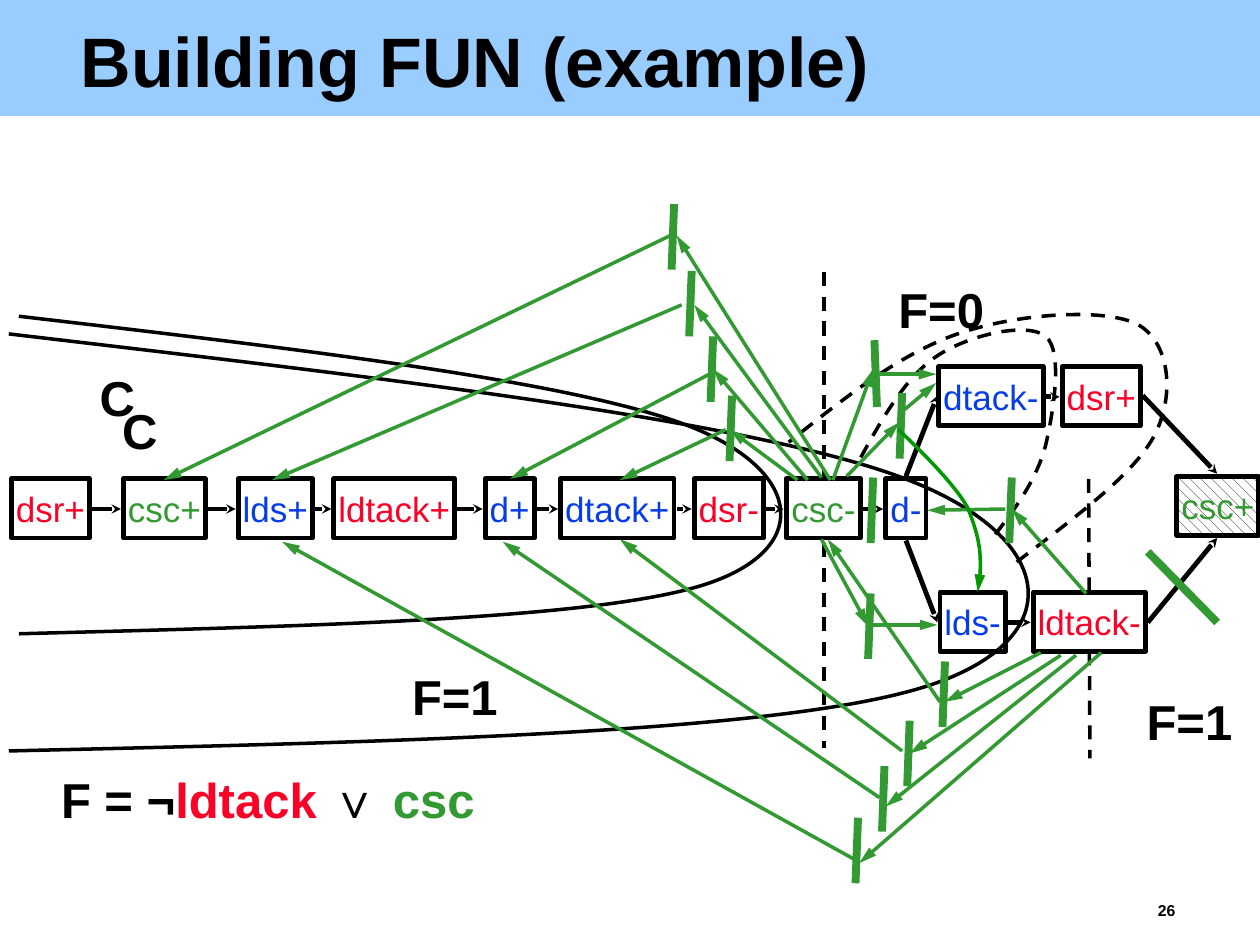
from dataclasses import dataclass
from itertools import pairwise

from pptx import Presentation
from pptx.dml.color import RGBColor as RGB
from pptx.enum.dml import MSO_LINE as Dash, MSO_PATTERN as Hatch
from pptx.enum.shapes import MSO_CONNECTOR as Link, MSO_SHAPE as Kind
from pptx.enum.text import MSO_ANCHOR as Anchor, PP_ALIGN as Align
from pptx.oxml.ns import qn
from pptx.oxml.xmlchemy import OxmlElement as Node
from pptx.util import Pt

SCALE = 9144  # EMU per px, 100 px to the inch


@dataclass(frozen=True)
class Theme:
    font: str = "Arial"
    black: str = "000000"
    white: str = "FFFFFF"
    band: str = "99CCFF"
    red: str = "FC0128"
    blue: str = "063DE8"
    green: str = "339933"
    leaf: str = "009900"
    title: float = 40
    label: float = 28
    event: float = 20
    number: float = 9
    thin: float = 2
    mid: float = 2.75
    thick: float = 4.5


T = Theme()
HIGH = 47  # box height

# text, colour, left, width
CHAIN = [
    ("dsr+", T.red, 9, 62), ("csc+", T.green, 98, 65),
    ("lds+", T.blue, 189, 59), ("ldtack+", T.red, 265, 96),
    ("d+", T.blue, 385, 39), ("dtack+", T.blue, 445, 90),
    ("dsr-", T.red, 551, 55), ("csc-", T.green, 624, 59),
    ("d-", T.blue, 703, 32),
]
UPPER = [("dtack-", T.blue, 745, 83), ("dsr+", T.red, 843, 62)]
LOWER = [("lds-", T.blue, 746, 52), ("ldtack-", T.red, 820, 89)]
ROWS = [(380, CHAIN), (291, UPPER), (470, LOWER)]

FORKS = [
    (719, 378, 744, 314), (719, 429, 744, 494),
    (911, 494, 966, 427), (907, 314, 966, 376),
]
CUTS = [(864, 380, 865, 602), (654, 216, 654, 594)]

# top ends of the upright green bars
BARS = [
    (750, 525), (722, 572), (702, 608), (681, 649), (803, 379),
    (581, 314), (566, 267), (549, 215), (535, 162),
    (693, 379), (691, 471), (716, 312),
]
SLANTS = [(911, 438, 966, 494), (694, 270, 696, 323)]

# from ldtack-
LOW_RAYS = [
    (826, 518, 750, 557), (746, 557, 657, 428),
    (842, 520, 722, 598), (716, 596, 492, 428),
    (854, 520, 703, 640), (698, 633, 399, 430),
    (874, 518, 682, 685), (678, 682, 224, 430),
    (862, 471, 803, 404), (798, 404, 736, 405),
]
# from csc-
TOP_RAYS = [
    (633, 381, 579, 341), (576, 341, 492, 381),
    (641, 381, 566, 293), (563, 297, 405, 380),
    (652, 379, 551, 242), (541, 242, 216, 381),
    (659, 381, 537, 187), (532, 187, 130, 381),
    (661, 381, 693, 293), (695, 297, 743, 297),
    (672, 378, 714, 335), (718, 325, 743, 304),
    (652, 428, 689, 497), (693, 496, 744, 496),
]

CLOUDS = [
    [(15, 251), (237, 277), (459, 303), (549, 339), (639, 375),
     (645, 438), (556, 465), (467, 492), (241, 497), (15, 503)],
    [(7, 265), (304, 300), (601, 334), (721, 381), (842, 428),
     (850, 510), (731, 546), (612, 582), (310, 589), (7, 596)],
]
DOTTED = [
    [(807, 446), (854, 410), (902, 375), (917, 344), (933, 312),
     (928, 270), (902, 257), (875, 244), (806, 249), (760, 265),
     (714, 281), (670, 316), (626, 351)],
    [(790, 424), (807, 402), (823, 380), (830, 353), (836, 327),
     (844, 279), (830, 267), (815, 255), (768, 266), (743, 283),
     (718, 300), (699, 334), (680, 369)],
]
BEND = [(713, 341), (724, 351), (758, 384), (768, 403),
        (776, 423), (781, 443), (776, 470)]

LABELS = [
    ("F=1", 327, 525, 68), ("F=0", 713, 218, 68), ("F=1", 910, 545, 68),
    ("C", 79, 288, 28), ("C", 97, 314, 28),
]


def px(*nums):
    return [n * SCALE for n in nums]


def ink(hue):
    return RGB.from_string(hue)


def write(shape, runs, size, pad, bold=True, align=Align.CENTER,
          wrap=False, lead=None):
    """Fill a shape with one line of (text, colour) runs; pad is left, top."""
    frame = shape.text_frame
    frame.word_wrap = wrap
    frame.margin_left = frame.margin_right = pad[0] * SCALE
    frame.margin_top, frame.margin_bottom = pad[1] * SCALE, 0
    para = frame.paragraphs[0]
    para.alignment = align
    para.font.name, para.font.size, para.font.bold = T.font, Pt(size), bold
    if lead:
        para.line_spacing = lead
    for text, hue in runs:
        run = para.add_run()
        run.text = text
        run.font.color.rgb = ink(hue)
    return frame


def label(slide, area, runs, size, pad, **style):
    write(slide.shapes.add_textbox(*px(*area)), runs, size, pad, **style)


def stroke(shape, hue, width, dash=False, head=None):
    """Style a line; head is (type, width, length) of its arrowhead."""
    line = shape.line
    line.color.rgb = ink(hue)
    line.width = Pt(width)
    if dash:
        line.dash_style = Dash.DASH
    if head:
        end = Node("a:tailEnd")
        for key, val in zip(("type", "w", "len"), head):
            end.set(key, val)
        shape.element.spPr.find(qn("a:ln")).append(end)


STEALTH = ("stealth", "sm", "sm")
POINT = ("triangle", "med", "lg")


def link(slide, ends, hue, width, **style):
    shape = slide.shapes.add_connector(Link.STRAIGHT, *px(*ends))
    stroke(shape, hue, width, **style)
    shape.element.spPr.append(Node("a:effectLst"))


def curve(slide, points, hue=T.black, **style):
    """Draw a chain of cubic curves: a start, then three points for each."""
    form = slide.shapes.build_freeform(*points[0], scale=SCALE)
    form.add_line_segments(points[1:], close=False)
    shape = form.convert_to_shape()
    shape.shadow.inherit = False
    shape.fill.background()
    stroke(shape, hue, T.thin, **style)
    steps = list(shape.element.iter(qn("a:lnTo")))
    for i in range(0, len(steps), 3):
        cubic = Node("a:cubicBezTo")
        steps[i].addprevious(cubic)
        for step in steps[i:i + 3]:
            cubic.append(step[0])
            step.getparent().remove(step)


def event(slide, text, hue, left, top, width, hatch=False):
    shape = slide.shapes.add_shape(Kind.RECTANGLE, *px(left, top, width, HIGH))
    shape.shadow.inherit = False
    if hatch:
        shape.fill.patterned()
        shape.fill.pattern = Hatch.DASHED_DOWNWARD_DIAGONAL
        shape.fill.fore_color.rgb = ink(T.black)
        shape.fill.back_color.rgb = ink(T.white)
    elif text in ("ldtack-", "csc-"):
        shape.fill.solid()
        shape.fill.fore_color.rgb = ink(T.white)
    else:
        shape.fill.background()
    stroke(shape, T.black, T.mid)
    frame = write(shape, [(text, hue)], T.event, (2, 0), bold=False)
    frame.vertical_anchor = Anchor.MIDDLE


def row(slide, top, items):
    """Place the events of one row and the arrows between neighbours."""
    for text, hue, left, width in items:
        event(slide, text, hue, left, top, width)
    for (_, _, left, width), (_, _, end, _) in pairwise(items):
        y = top + HIGH // 2 + 1
        link(slide, (left + width + 2, y, end - 2, y), T.black, T.mid,
             head=STEALTH)


def header(slide):
    band = slide.shapes.add_shape(Kind.RECTANGLE, *px(0, 0, 1000, 92))
    band.shadow.inherit = False
    band.fill.solid()
    band.fill.fore_color.rgb = ink(T.band)
    band.line.fill.background()
    label(slide, (58, 21, 883, 62), [("Building FUN (example)", T.black)],
          T.title, (6, 2), align=Align.LEFT, wrap=True, lead=0.87)
    label(slide, (913, 714, 26, 19), [("26", T.black)],
          T.number, (6, 2), align=Align.LEFT, lead=0.97)


def main():
    deck = Presentation()
    deck.slide_width, deck.slide_height = px(1000, 750)
    slide = deck.slides.add_slide(deck.slide_layouts[6])
    header(slide)
    for ends in CUTS:
        link(slide, ends, T.black, T.thin, dash=True)
    for top, items in ROWS:
        row(slide, top, items)
    event(slide, "csc+", T.green, 934, 378, 65, hatch=True)
    for ends in FORKS:
        link(slide, ends, T.black, T.mid, head=STEALTH)
    formula = [("F = ¬", T.black), ("ldtack", T.red),
               (" ∨ ", T.black), ("csc", T.green)]
    label(slide, (27, 602, 371, 57), formula, T.label, (10, 9), wrap=True)
    for text, left, top, width in LABELS:
        label(slide, (left, top, width, HIGH), [(text, T.black)],
              T.label, (0, 4))
    for points in CLOUDS:
        curve(slide, points)
    for points in DOTTED:
        curve(slide, points, dash=True)
    for ends in [(x, y, x - 2, y + 52) for x, y in BARS] + SLANTS:
        link(slide, ends, T.green, T.thick)
    for ends in LOW_RAYS + TOP_RAYS:
        link(slide, ends, T.green, T.thin, head=POINT)
    curve(slide, BEND, T.leaf, head=POINT)
    deck.save("out.pptx")


if __name__ == "__main__":
    main()
